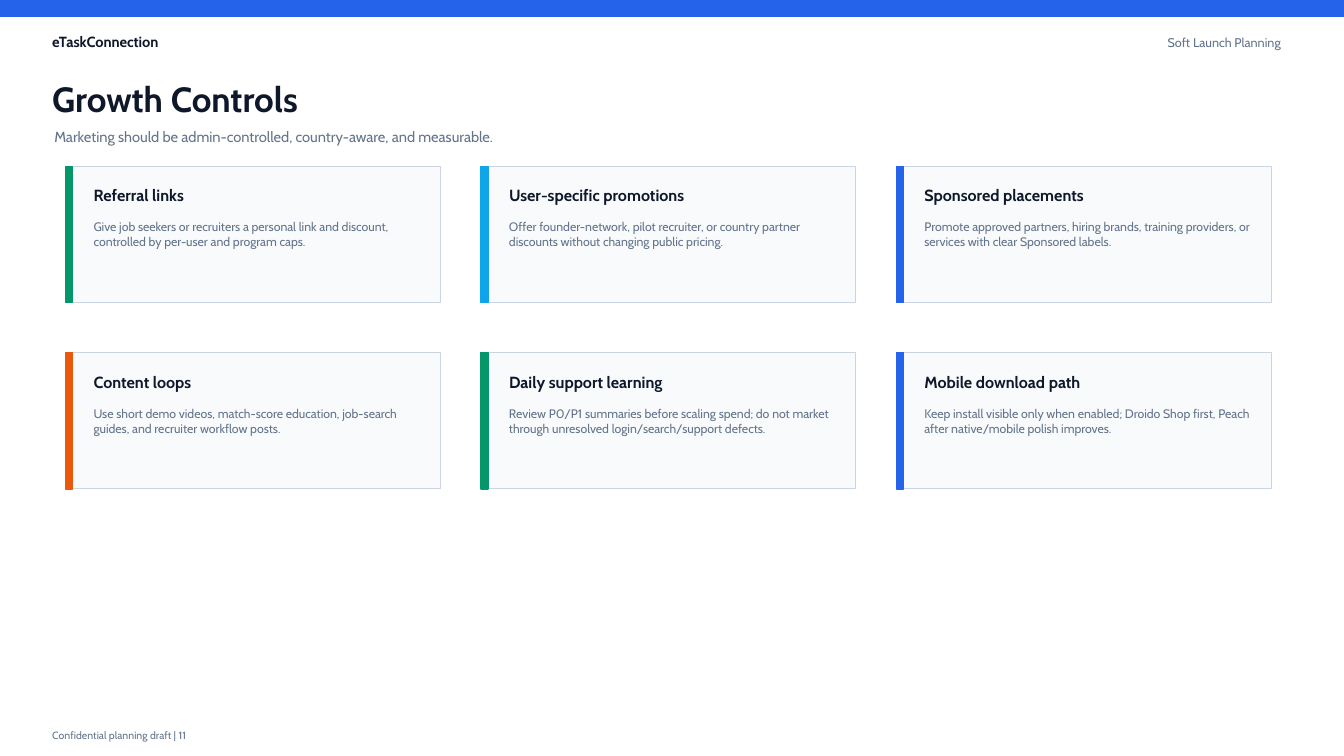
from pptx import Presentation
from pptx.dml.color import RGBColor
from pptx.enum.shapes import MSO_SHAPE as Shape
from pptx.enum.text import MSO_AUTO_SIZE as AutoSize, PP_ALIGN as Align
from pptx.util import Emu, Pt

EMU_PER_PX = 9144  # 100 px to the inch

WHITE = RGBColor(0xFF, 0xFF, 0xFF)
INK = RGBColor(0x0F, 0x17, 0x2A)
MUTED = RGBColor(0x64, 0x74, 0x8B)
PANEL = RGBColor(0xF8, 0xFA, 0xFC)
BORDER = RGBColor(0xCB, 0xD5, 0xE1)
BLUE = RGBColor(0x25, 0x63, 0xEB)
SKY = RGBColor(0x0E, 0xA5, 0xE9)
GREEN = RGBColor(0x05, 0x96, 0x69)
ORANGE = RGBColor(0xEA, 0x58, 0x0C)

CARD_COLUMNS = 3
CARD_LEFT, CARD_TOP = 65, 165
CARD_WIDTH, CARD_HEIGHT = 372, 135
COLUMN_STEP, ROW_STEP = 412, 185

CARDS = [
    ("Referral links", GREEN,
     "Give job seekers or recruiters a personal link and discount, "
     "controlled by per-user and program caps."),
    ("User-specific promotions", SKY,
     "Offer founder-network, pilot recruiter, or country partner "
     "discounts without changing public pricing."),
    ("Sponsored placements", BLUE,
     "Promote approved partners, hiring brands, training providers, or "
     "services with clear Sponsored labels."),
    ("Content loops", ORANGE,
     "Use short demo videos, match-score education, job-search guides, "
     "and recruiter workflow posts."),
    ("Daily support learning", GREEN,
     "Review P0/P1 summaries before scaling spend; do not market "
     "through unresolved login/search/support defects."),
    ("Mobile download path", BLUE,
     "Keep install visible only when enabled; Droido Shop first, Peach "
     "after native/mobile polish improves."),
]


def px(length):
    return Emu(length * EMU_PER_PX)


class SlideBuilder:
    font_name = "Cabin"

    def __init__(self, slide):
        self.slide = slide
        background = slide.background.fill
        background.solid()
        background.fore_color.rgb = WHITE

    def rectangle(self, left, top, width, height, fill, line=None, line_width=1):
        """Draw a filled rectangle, outlined in its fill colour unless line is given."""
        shape = self.slide.shapes.add_shape(
            Shape.RECTANGLE, px(left), px(top), px(width), px(height))
        shape.shadow.inherit = False
        shape.fill.solid()
        shape.fill.fore_color.rgb = fill
        shape.line.color.rgb = line or fill
        shape.line.width = Pt(line_width)

    def text(self, left, top, width, height, content, size, color=MUTED,
             bold=False, align=None, wrap=False):
        box = self.slide.shapes.add_textbox(px(left), px(top), px(width), px(height))
        frame = box.text_frame
        frame.word_wrap = wrap
        frame.auto_size = AutoSize.SHAPE_TO_FIT_TEXT
        frame.text = content
        paragraph = frame.paragraphs[0]
        paragraph.alignment = align
        font = paragraph.runs[0].font
        font.name = self.font_name
        font.size = Pt(size)
        font.bold = bold
        font.color.rgb = color

    def card(self, left, top, heading, accent, body):
        self.rectangle(left, top, CARD_WIDTH, CARD_HEIGHT, PANEL, BORDER, 0.7)
        self.rectangle(left, top, 7, CARD_HEIGHT, accent)
        self.text(left + 18, top + 14, 342, 25, heading, 11.5, INK, bold=True)
        self.text(left + 18, top + 48, 344, 77, body, 8.8, wrap=True)


def main():
    presentation = Presentation()
    presentation.slide_width = px(1333)
    presentation.slide_height = px(750)
    builder = SlideBuilder(presentation.slides.add_slide(presentation.slide_layouts[6]))

    builder.rectangle(0, 0, 1333, 16, BLUE)
    builder.text(42, 28, 240, 25, "eTaskConnection", 10.5, INK, bold=True)
    builder.text(42, 72, 920, 50, "Growth Controls", 25, INK, bold=True)
    builder.text(44, 122, 1040, 34,
                 "Marketing should be admin-controlled, country-aware, and measurable.", 10.5)
    builder.text(1035, 30, 245, 26, "Soft Launch Planning", 9, align=Align.RIGHT)

    for index, (heading, accent, body) in enumerate(CARDS):
        row, column = divmod(index, CARD_COLUMNS)
        builder.card(CARD_LEFT + column * COLUMN_STEP, CARD_TOP + row * ROW_STEP,
                     heading, accent, body)

    builder.text(42, 718, 480, 20, "Confidential planning draft | 11", 7.5)
    presentation.save("out.pptx")


if __name__ == "__main__":
    main()
